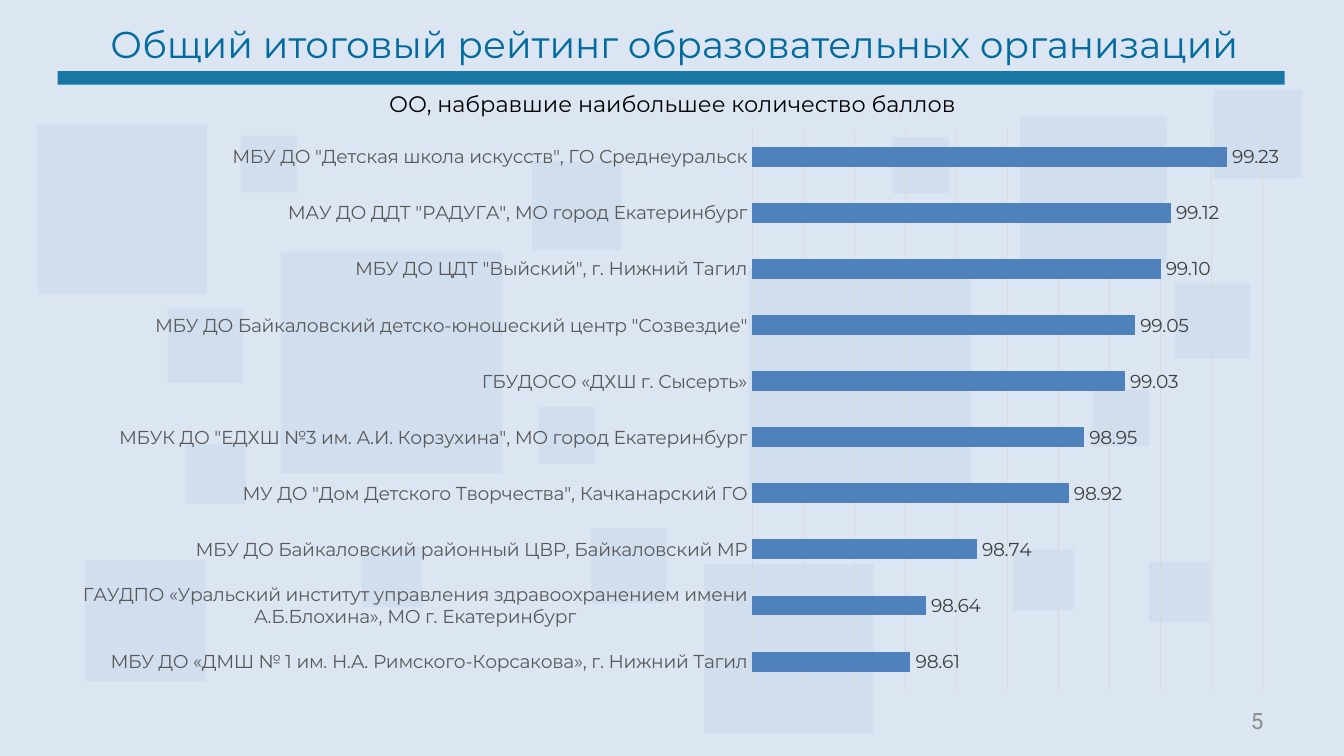
from lxml import etree
from pptx import Presentation
from pptx.chart.data import CategoryChartData
from pptx.dml.color import RGBColor
from pptx.enum.chart import XL_CHART_TYPE, XL_LABEL_POSITION, XL_TICK_LABEL_POSITION, XL_TICK_MARK
from pptx.enum.shapes import MSO_SHAPE
from pptx.enum.text import MSO_ANCHOR, PP_ALIGN
from pptx.oxml import parse_xml
from pptx.oxml.ns import nsdecls, qn
from pptx.util import Inches, Pt

BACKGROUND = RGBColor(0xDC, 0xE6, 0xF2)
SQUARE = RGBColor(0xB9, 0xCD, 0xE5)
TEAL = RGBColor(0x03, 0x6B, 0x9D)
BAR = RGBColor(0x4F, 0x81, 0xBD)
GRID = RGBColor(0xD9, 0xD9, 0xD9)
BLACK = RGBColor(0x00, 0x00, 0x00)
CATEGORY_GREY = RGBColor(0x59, 0x59, 0x59)
LABEL_GREY = RGBColor(0x40, 0x40, 0x40)
NUMBER_GREY = RGBColor(0x8C, 0x8C, 0x8C)

# Bottom bar first
RATINGS = [
    ("МБУ ДО «ДМШ № 1 им. Н.А. Римского-Корсакова», г. Нижний Тагил", 98.61),
    ("ГАУДПО «Уральский институт управления здравоохранением имени А.Б.Блохина», МО г. Екатеринбург", 98.64),
    ("МБУ ДО Байкаловский районный ЦВР, Байкаловский МР", 98.74),
    ('МУ ДО "Дом Детского Творчества", Качканарский ГО', 98.92),
    ('МБУК ДО "ЕДХШ №3 им. А.И. Корзухина", МО город Екатеринбург', 98.95),
    ("ГБУДОСО «ДХШ г. Сысерть»", 99.03),
    ('МБУ ДО Байкаловский детско-юношеский центр "Созвездие"', 99.05),
    ('МБУ ДО ЦДТ "Выйский", г. Нижний Тагил', 99.10),
    ('МАУ ДО ДДТ "РАДУГА", МО город Екатеринбург', 99.12),
    ('МБУ ДО "Детская школа искусств", ГО Среднеуральск', 99.23),
]

# Left, top, side of each background square
SQUARES = [
    (0.63, 4.17, 0.9), (0.28, 0.93, 1.26), (1.25, 2.29, 0.56), (1.79, 1.01, 0.42),
    (2.09, 1.87, 1.65), (3.96, 1.2, 0.66), (1.38, 3.3, 0.45), (4.4, 3.93, 0.56),
    (4.01, 3.03, 0.42), (2.69, 4.07, 0.45), (5.24, 4.2, 1.26), (7.59, 0.87, 1.09),
    (6.64, 1.02, 0.42), (5.57, 1.99, 1.65), (9.03, 0.67, 0.66), (8.55, 4.18, 0.45),
    (8.74, 2.11, 0.56), (8.13, 2.9, 0.42), (7.54, 4.09, 0.45),
]

# Text, place, anchor, paragraph alignment, font values
TEXTS = [
    ("ОО, набравшие наибольшее количество баллов", (2.03, 0.62, 5.95, 0.3),
     MSO_ANCHOR.TOP, PP_ALIGN.CENTER, {"name": "Montserrat", "size": Pt(12), "color": BLACK}),
    ("Общий итоговый рейтинг образовательных организаций", (0.02, 0.11, 10, 0.44),
     MSO_ANCHOR.TOP, PP_ALIGN.CENTER, {"name": "Montserrat", "size": Pt(20), "color": TEAL}),
    ("5", (7.17, 5.21, 2.33, 0.3),
     MSO_ANCHOR.MIDDLE, PP_ALIGN.RIGHT, {"name": "Roboto", "size": Pt(12), "color": NUMBER_GREY}),
]


def set_font(font, values):
    for name, value in values.items():
        if name == "color":
            font.color.rgb = value
        else:
            setattr(font, name, value)


def add_rectangle(page, place, color, opacity):
    shape = page.shapes.add_shape(MSO_SHAPE.RECTANGLE, *map(Inches, place))
    shape.shadow.inherit = False
    shape.line.fill.background()
    shape.fill.solid()
    shape.fill.fore_color.rgb = color
    tint = shape.fill._xPr.find(".//" + qn("a:srgbClr"))
    etree.SubElement(tint, qn("a:alpha"), val=str(opacity * 1000))


# Widescreen page, 16 to 9
deck = Presentation()
deck.slide_width, deck.slide_height = Inches(10), Inches(10 * 9 / 16)
page = deck.slides.add_slide(deck.slide_layouts[6])
page.background.fill.solid()
page.background.fill.fore_color.rgb = BACKGROUND

# Background squares and the title rule
for left, top, side in SQUARES:
    add_rectangle(page, (left, top, side, side), SQUARE, 30)
add_rectangle(page, (0.43, 0.53, 9.13, 0.1), TEAL, 90)

# Title, subtitle and page number
for text, place, anchor, alignment, font_values in TEXTS:
    box = page.shapes.add_textbox(*map(Inches, place))
    box.text_frame.word_wrap = True
    box.text_frame.vertical_anchor = anchor
    para = box.text_frame.paragraphs[0]
    para.alignment = alignment
    span = para.add_run()
    span.text = text
    set_font(span.font, font_values)

# Rating chart
data = CategoryChartData(number_format="0.00")
data.categories = [name for name, score in RATINGS]
data.add_series("Series 1", [score for name, score in RATINGS])
chart = page.shapes.add_chart(
    XL_CHART_TYPE.BAR_CLUSTERED, *map(Inches, (0.43, 0.87, 9.13, 4.35)), data).chart
chart.has_legend = False
chart.has_title = False
chart_font = {"name": "Montserrat", "size": Pt(10)}
set_font(chart.font, {**chart_font, "color": BLACK})

# Axes
categories = chart.category_axis
categories.major_tick_mark = categories.minor_tick_mark = XL_TICK_MARK.NONE
categories.tick_label_position = XL_TICK_LABEL_POSITION.NEXT_TO_AXIS
set_font(categories.tick_labels.font, {**chart_font, "color": CATEGORY_GREY})
scores = chart.value_axis
for name, value in {"minimum_scale": 98.3, "maximum_scale": 99.3, "major_unit": 0.1,
                    "has_major_gridlines": True, "visible": False}.items():
    setattr(scores, name, value)
for line in (categories.format.line, scores.major_gridlines.format.line):
    line.color.rgb = GRID
    line.width = Pt(0.75)

# Bars and their labels
plot = chart.plots[0]
plot.gap_width = 182
plot.vary_by_categories = False
series = plot.series[0]
series.format.fill.solid()
series.format.fill.fore_color.rgb = BAR
labels = series.data_labels
for name, value in {"show_value": True, "position": XL_LABEL_POSITION.OUTSIDE_END,
                    "number_format": "0.00", "number_format_is_linked": False}.items():
    setattr(labels, name, value)
set_font(labels.font, {**chart_font, "color": LABEL_GREY})

# Plot area as shares of the chart frame
area = chart._chartSpace.chart.plotArea
for old in area.findall(qn("c:layout")):
    area.remove(old)
shares = {"x": 0.566, "y": 0.02, "w": 0.416, "h": 0.96}
modes = '<c:layoutTarget val="inner"/><c:xMode val="edge"/><c:yMode val="edge"/>'
sizes = "".join(f'<c:{key} val="{share}"/>' for key, share in shares.items())
area.insert(0, parse_xml(
    f'<c:layout {nsdecls("c")}><c:manualLayout>{modes}{sizes}</c:manualLayout></c:layout>'))

deck.save("out.pptx")
